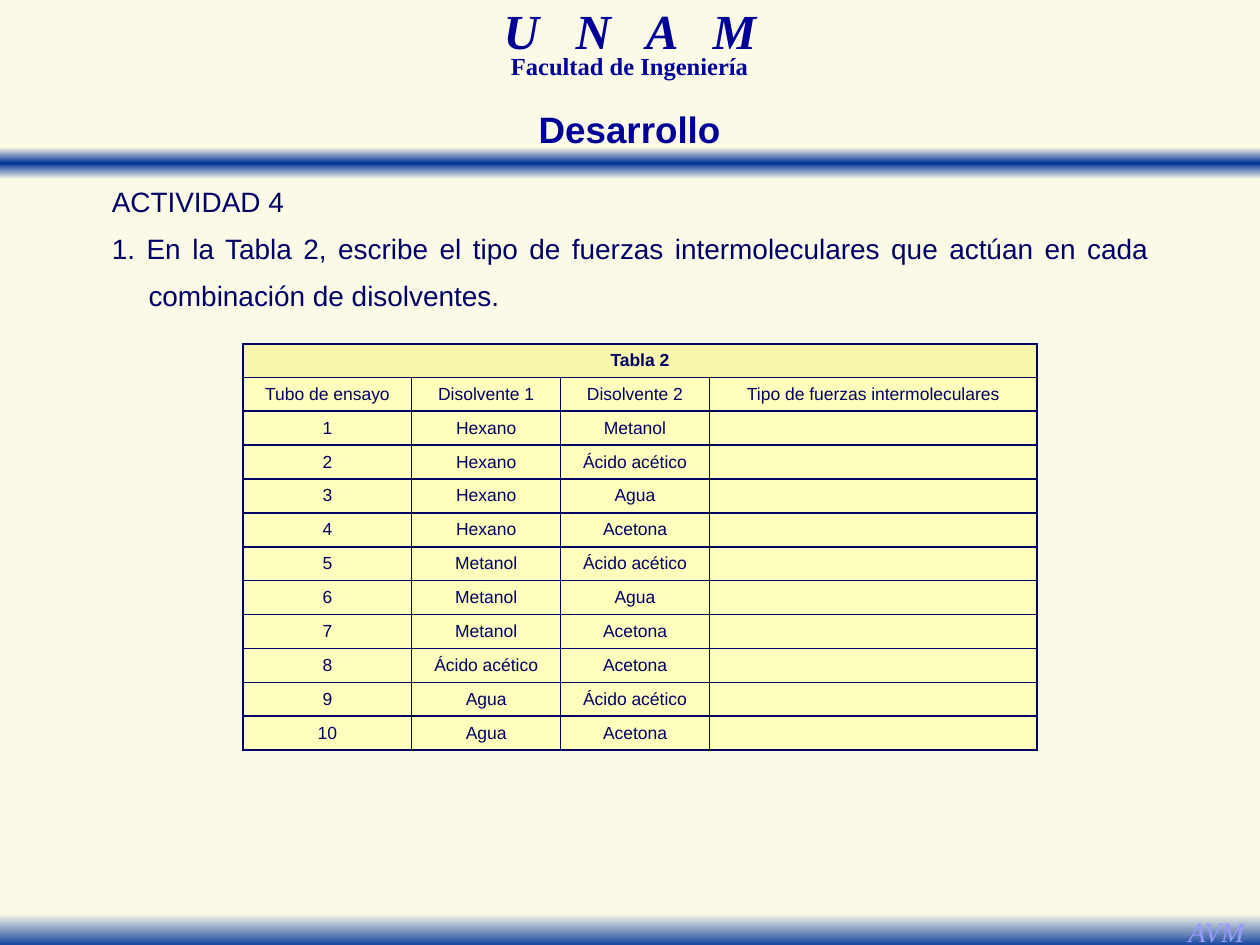
from lxml.etree import SubElement
from pptx import Presentation
from pptx.dml.color import RGBColor
from pptx.enum.shapes import MSO_SHAPE
from pptx.enum.text import MSO_ANCHOR, MSO_AUTO_SIZE, PP_ALIGN
from pptx.oxml.ns import qn
from pptx.util import Cm, Pt

# Content
SCHOOL = ["U N A ", "M"]
FACULTY = "Facultad de Ingeniería"
INITIALS = "AVM"
TITLE = "Desarrollo"
ACTIVITY = [
    "ACTIVIDAD 4",
    "1. En la Tabla 2, escribe el tipo de fuerzas intermoleculares que actúan "
    "en cada combinación de disolventes.",
]
CAPTION = "Tabla 2"
HEADINGS = ["Tubo de ensayo", "Disolvente 1", "Disolvente 2",
            "Tipo de fuerzas intermoleculares"]
SOLVENT_PAIRS = [
    ("Hexano", "Metanol"),
    ("Hexano", "Ácido acético"),
    ("Hexano", "Agua"),
    ("Hexano", "Acetona"),
    ("Metanol", "Ácido acético"),
    ("Metanol", "Agua"),
    ("Metanol", "Acetona"),
    ("Ácido acético", "Acetona"),
    ("Agua", "Ácido acético"),
    ("Agua", "Acetona"),
]

# Style
CREAM = RGBColor(0xFA, 0xFA, 0xE6)
BAND_BLUE = RGBColor(0x00, 0x33, 0x99)
HEADER_BLUE = RGBColor(0x00, 0x00, 0x99)
TEXT_NAVY = RGBColor(0x00, 0x00, 0x66)
LILAC = RGBColor(0x99, 0x99, 0xFF)
CAPTION_YELLOW = RGBColor(0xF8, 0xF6, 0xAC)
CELL_YELLOW = RGBColor(0xFF, 0xFF, 0xBD)
SERIF, SANS = "Times New Roman", "Arial"
COLUMN_WIDTHS = [3.4, 3, 3, 6.6]
ROW_HEIGHT = 0.68


def style(paragraph, font_name, size, color, bold=False, italic=False):
    for run in paragraph.runs:
        font = run.font
        font.name, font.size = font_name, Pt(size)
        font.bold, font.italic = bold, italic
        font.color.rgb = color


def place(shape, left, top, width, height):
    shape.left, shape.top = Cm(left), Cm(top)
    shape.width, shape.height = Cm(width), Cm(height)
    shape.text_frame.auto_size = MSO_AUTO_SIZE.NONE
    shape.text_frame.vertical_anchor = MSO_ANCHOR.TOP


def add_band(slide, top, height, stops):
    band = slide.shapes.add_shape(MSO_SHAPE.RECTANGLE, 0, Cm(top), Cm(25.4), Cm(height))
    band.shadow.inherit = False
    band.line.fill.background()
    band.fill.gradient()
    band.fill.gradient_angle = 270
    stop_list = next(band._element.iter(qn("a:gsLst")))
    for old_stop in list(stop_list):
        stop_list.remove(old_stop)
    for position, color in stops:
        stop = SubElement(stop_list, qn("a:gs"), pos=str(position * 1000))
        SubElement(stop, qn("a:srgbClr"), val=str(color))


def add_line(slide, runs, left, top, width, height, spacing=1.0, wrap=True):
    box = slide.shapes.add_textbox(0, 0, 0, 0)
    place(box, left, top, width, height)
    box.text_frame.word_wrap = wrap
    paragraph = box.text_frame.paragraphs[0]
    for text in runs:
        paragraph.add_run().text = text
    paragraph.alignment = PP_ALIGN.CENTER
    paragraph.line_spacing = spacing
    return paragraph


def fill_cell(cell, text, color, bold=False):
    cell.text = text
    cell.vertical_anchor = MSO_ANCHOR.MIDDLE
    paragraph = cell.text_frame.paragraphs[0]
    paragraph.alignment = PP_ALIGN.CENTER
    style(paragraph, SANS, 10, TEXT_NAVY, bold)
    if not text:  # keeps an empty row as low as the others
        SubElement(paragraph._p, qn("a:endParaRPr"), sz="1000")
    properties = cell._tc.get_or_add_tcPr()
    for side in ("a:lnL", "a:lnR", "a:lnT", "a:lnB"):
        border = SubElement(properties, qn(side), w=str(Pt(1)))
        SubElement(SubElement(border, qn("a:solidFill")), qn("a:srgbClr"), val=str(TEXT_NAVY))
    cell.fill.solid()
    cell.fill.fore_color.rgb = color


def add_solvent_table(slide):
    rows = [[CAPTION, "", "", ""], HEADINGS]
    rows += [[str(tube), *pair, ""] for tube, pair in enumerate(SOLVENT_PAIRS, 1)]
    table = slide.shapes.add_table(
        len(rows), len(HEADINGS), Cm(4.9), Cm(6.93),
        Cm(sum(COLUMN_WIDTHS)), Cm(ROW_HEIGHT * len(rows))).table
    for column, width in zip(table.columns, COLUMN_WIDTHS):
        column.width = Cm(width)
    for r, texts in enumerate(rows):
        table.rows[r].height = Cm(ROW_HEIGHT)
        for c, text in enumerate(texts):
            fill_cell(table.cell(r, c), text, CELL_YELLOW if r else CAPTION_YELLOW, bold=r == 0)
    table.cell(0, 0).merge(table.cell(0, len(HEADINGS) - 1))


def main():
    deck = Presentation()
    deck.slide_width, deck.slide_height = Cm(25.4), Cm(19.05)
    slide = deck.slides.add_slide(deck.slide_layouts[1])
    slide.background.fill.solid()
    slide.background.fill.fore_color.rgb = CREAM

    # Bands and institutional header
    add_band(slide, 2.97, 0.64, [(0, CREAM), (50, BAND_BLUE), (100, CREAM)])
    add_band(slide, 18.42, 0.7, [(0, CREAM), (100, BAND_BLUE)])
    school = add_line(slide, SCHOOL, 7.72, 0.2, 9.96, 1.09, spacing=0.7)
    style(school, SERIF, 28, HEADER_BLUE, bold=True, italic=True)
    school.runs[0].font._element.set("spc", "700")
    faculty = add_line(slide, [FACULTY], 8.15, 1.07, 9.09, 0.66, spacing=0.7)
    style(faculty, SERIF, 14, HEADER_BLUE, bold=True)
    initials = add_line(slide, [INITIALS], 23.65, 18.31, 1.75, 0.94, wrap=False)
    style(initials, SERIF, 16, LILAC, italic=True)

    # Title
    title = slide.shapes.title
    place(title, 7.19, 2.03, 11, 1.14)
    title.text_frame.text = TITLE
    title.text_frame.paragraphs[0].alignment = PP_ALIGN.CENTER
    style(title.text_frame.paragraphs[0], SANS, 21, HEADER_BLUE, bold=True)

    # Activity instructions
    activity = slide.placeholders[1]
    place(activity, 2, 3.33, 21.41, 3.12)
    activity.text_frame.text = "\n".join(ACTIVITY)
    for paragraph, indent in zip(activity.text_frame.paragraphs, (0, 0.74)):
        properties = paragraph._p.get_or_add_pPr()
        properties.set("marL", str(Cm(indent)))
        properties.set("indent", str(-Cm(indent)))
        SubElement(properties, qn("a:buNone"))
        paragraph.alignment = PP_ALIGN.JUSTIFY
        paragraph.line_spacing = 1.4
        paragraph.space_before = Pt(0)
        style(paragraph, SANS, 16, TEXT_NAVY)

    add_solvent_table(slide)
    deck.save("out.pptx")


if __name__ == "__main__":
    main()
